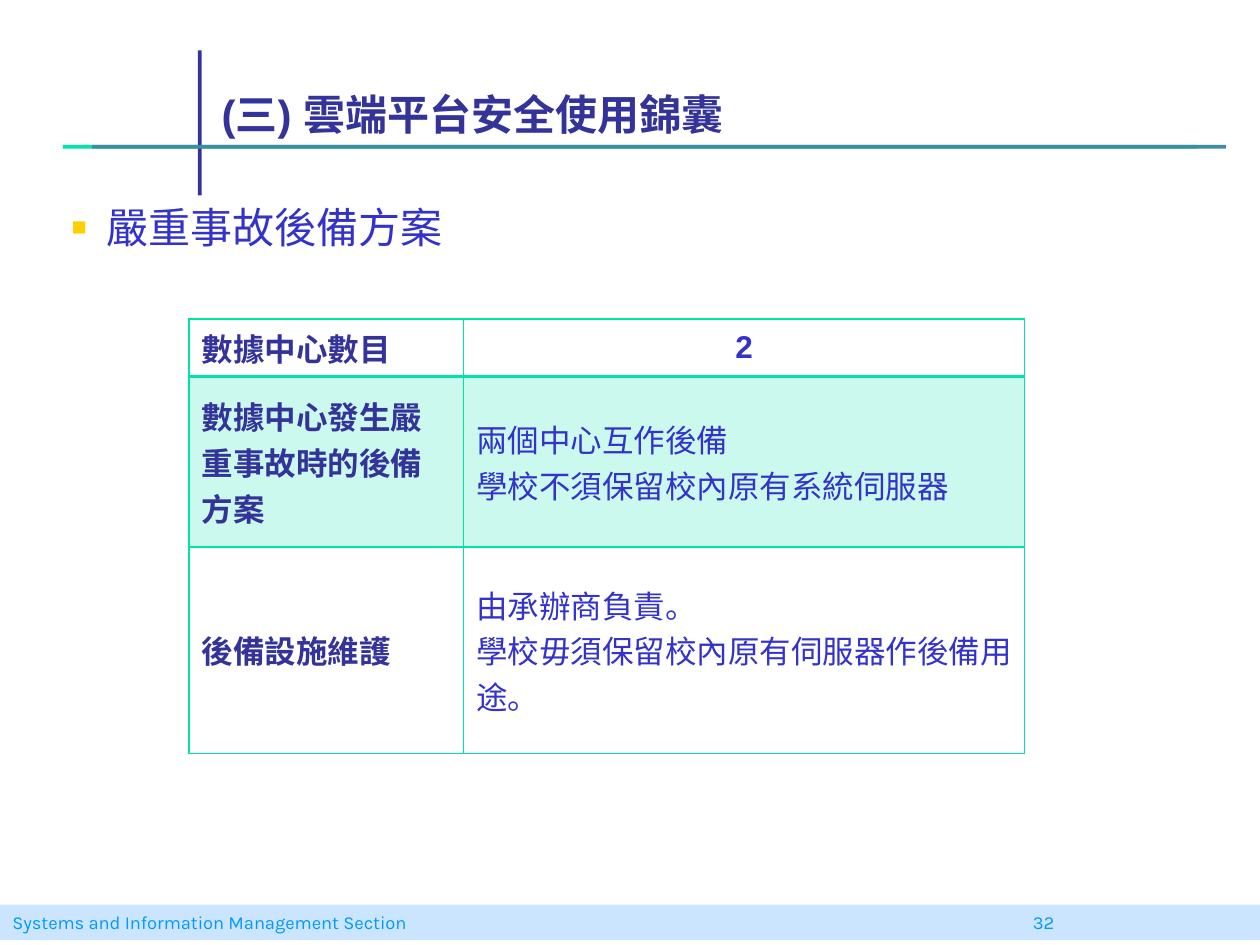
from lxml.etree import SubElement
from pptx import Presentation
from pptx.dml.color import RGBColor
from pptx.enum.shapes import MSO_SHAPE
from pptx.enum.text import MSO_ANCHOR, PP_ALIGN
from pptx.oxml import parse_xml
from pptx.oxml.ns import nsdecls, qn
from pptx.util import Inches, Pt

NAVY, BLUE, MINT, TEAL = "333399", "3333CC", "00E4A8", "3F8DA5"


def paint(fill, color, alpha=None):
    """Fill with a solid colour, see-through when alpha (percent) is given."""
    fill.solid()
    fill.fore_color.rgb = RGBColor.from_string(color)
    if alpha is not None:
        node = fill._xPr.find(qn("a:solidFill"))[0]
        SubElement(node, qn("a:alpha")).set("val", str(alpha * 1000))


def write(para, text, size, color, bold=False, font="Arial"):
    """Add one formatted run to a paragraph."""
    run = para.add_run()
    run.text = text
    run.font.name, run.font.size, run.font.bold = font, Pt(size), bold
    run.font.color.rgb = RGBColor.from_string(color)


def add_bar(slide, box, color, alpha=None):
    """Add a plain rectangle without an outline."""
    bar = slide.shapes.add_shape(MSO_SHAPE.RECTANGLE, *map(Inches, box))
    bar.shadow.inherit = False
    bar.line.fill.background()
    paint(bar.fill, color, alpha)
    return bar


def add_rules(slide):
    """Draw the crossed rules beside the title."""
    add_bar(slide, (0.5, 1.15, 9, 0.03), MINT)
    add_bar(slide, (1.57, 0.4, 0.03, 1.15), NAVY)
    add_bar(slide, (0.73, 1.15, 9, 0.03), TEAL)


def add_footer(slide, box, text, number):
    """Add the footer band with the section name and page number."""
    bar = add_bar(slide, box, "99CCFF", 50)
    frame = bar.text_frame
    frame.vertical_anchor = MSO_ANCHOR.MIDDLE
    frame.margin_top = frame.margin_bottom = 0
    para = frame.paragraphs[0]
    para.alignment = PP_ALIGN.LEFT
    tabs = SubElement(para._p.get_or_add_pPr(), qn("a:tabLst"))
    tab = SubElement(tabs, qn("a:tab"))
    tab.set("pos", str(Inches(8.1)))
    tab.set("algn", "l")
    write(para, f"{text}\t{number}", 10.5, "0099FF", font="Karla")


def add_title(slide, box, text):
    """Place and format the title placeholder."""
    title = slide.shapes.title
    title.left, title.top, title.width, title.height = map(Inches, box)
    frame = title.text_frame
    frame.vertical_anchor = MSO_ANCHOR.BOTTOM
    frame.paragraphs[0].alignment = PP_ALIGN.LEFT
    write(frame.paragraphs[0], text, 24, NAVY, True)


def add_body(slide, box, text):
    """Add the bulleted heading above the table."""
    frame = slide.shapes.add_textbox(*map(Inches, box)).text_frame
    frame.word_wrap = True
    para = frame.paragraphs[0]
    para.alignment = PP_ALIGN.JUSTIFY
    props = para._p.get_or_add_pPr()
    props.set("marL", str(Inches(0.28)))
    props.set("indent", str(Inches(-0.28)))
    color = SubElement(props, qn("a:buClr"))
    SubElement(color, qn("a:srgbClr")).set("val", "FFCF01")
    SubElement(props, qn("a:buSzPct")).set("val", "60000")
    SubElement(props, qn("a:buFont")).set("typeface", "Arial")
    SubElement(props, qn("a:buChar")).set("char", "■")
    write(para, text, 24, BLUE)


def edge(cell, widths):
    """Set the cell borders, widths in points for L, R, T and B."""
    props = cell._tc.get_or_add_tcPr()
    for i, (side, width) in enumerate(zip("LRTB", widths)):
        props.insert(i, parse_xml(
            f'<a:ln{side} {nsdecls("a")} w="{Pt(width)}"><a:solidFill>'
            f'<a:srgbClr val="{MINT}"/></a:solidFill></a:ln{side}>'))


def add_grid(slide, box, cols, heights, rows):
    """Add the table of backup arrangements."""
    grid = slide.shapes.add_table(len(rows), len(cols), *map(Inches, box)).table
    for col, width in zip(grid.columns, cols):
        col.width = Inches(width)
    for r, (row, height) in enumerate(zip(rows, heights)):
        grid.rows[r].height = Inches(height)
        for c, lines in enumerate(row):
            cell = grid.cell(r, c)
            cell.vertical_anchor = MSO_ANCHOR.MIDDLE
            if r == 1:
                paint(cell.fill, MINT, 20)
            else:
                cell.fill.background()
            edge(cell, (1, 1, 2 if r == 1 else 1, 2 if r == 0 else 1))
            for i, line in enumerate(lines):
                frame = cell.text_frame
                para = frame.add_paragraph() if i else frame.paragraphs[0]
                if r == 0 and c == 1:
                    para.alignment = PP_ALIGN.CENTER
                write(para, line, 18, BLUE if c else NAVY, r == 0 or c == 0)


def main():
    """Build and save the slide."""
    deck = Presentation()
    deck.slide_width, deck.slide_height = Inches(10), Inches(7.5)
    slide = deck.slides.add_slide(deck.slide_layouts[5])
    add_rules(slide)
    add_footer(slide, (0, 7.18, 10, 0.28),
               "Systems and Information Management Section", 32)
    add_title(slide, (1.66, 0.32, 7.83, 0.83), "(三) 雲端平台安全使用錦囊")
    add_body(slide, (0.47, 1.55, 8.75, 0.6), "嚴重事故後備方案")
    add_grid(slide, (1.5, 2.53, 6.63, 3.45), (2.18, 4.45), (0.46, 1.35, 1.64), [
        (["數據中心數目"], ["2"]),
        (["數據中心發生嚴重事故時的後備方案"],
         ["兩個中心互作後備", "學校不須保留校內原有系統伺服器"]),
        (["後備設施維護"],
         ["由承辦商負責。", "學校毋須保留校內原有伺服器作後備用途。"]),
    ])
    deck.save("out.pptx")


if __name__ == "__main__":
    main()
